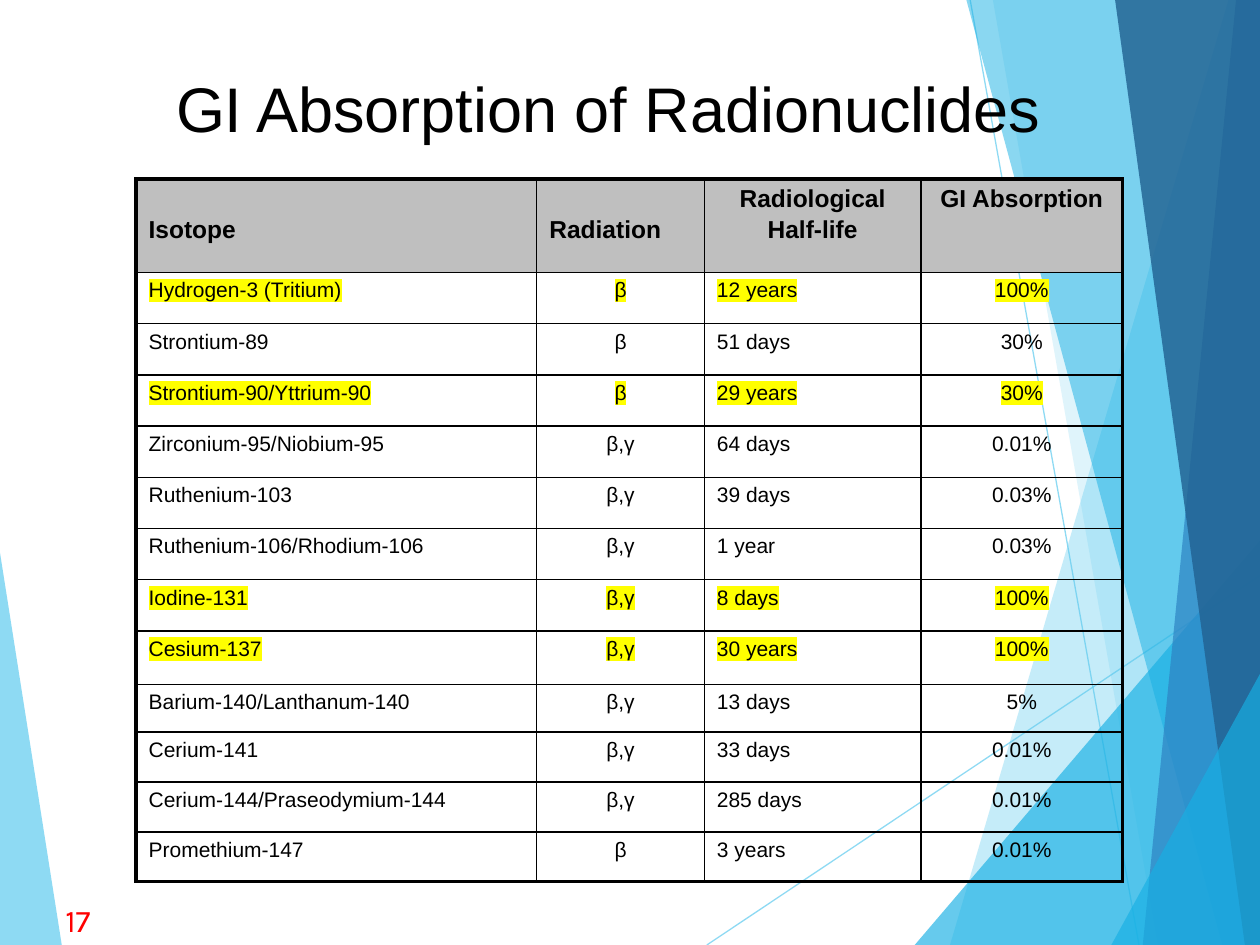
from dataclasses import dataclass

from lxml.etree import SubElement
from pptx import Presentation
from pptx.dml.color import RGBColor
from pptx.enum.shapes import MSO_CONNECTOR
from pptx.enum.text import PP_ALIGN
from pptx.oxml.ns import qn
from pptx.slide import Slide
from pptx.table import _Cell
from pptx.text.text import _Paragraph
from pptx.util import Inches, Pt

WIDTH, HEIGHT = Inches(10), Inches(7.5)
LEFT, CENTER = PP_ALIGN.LEFT, PP_ALIGN.CENTER


@dataclass(frozen=True)
class Theme:
    black: str = "000000"
    red: str = "FF0000"
    header_gray: str = "BFBFBF"
    marker: str = "FFFF00"
    sky: str = "5FCBEF"
    cyan: str = "17B0E4"
    blue: str = "2E83C3"
    navy: str = "226292"
    body_font: str = "Arial"
    number_font: str = "Karla"
    title_size: float = 36
    number_size: float = 18
    header_size: float = 14
    body_size: float = 12
    thin: float = 1
    thick: float = 2.25
    hairline: float = 0.75


THEME = Theme()


@dataclass(frozen=True)
class Facet:
    """A decorative polygon; points are percentages of the slide."""
    color: str
    opacity: int
    points: tuple[tuple[float, float], ...]


@dataclass(frozen=True)
class Isotope:
    name: str
    radiation: str
    half_life: str
    absorption: str
    marked: bool = False


@dataclass(frozen=True)
class Heading:
    lines: tuple[str, ...]
    width: float
    header_align: PP_ALIGN
    body_align: PP_ALIGN
    on_second_line: bool = False


LEFT_FACET = Facet(THEME.sky, 70, ((0, 58.5), (4.9, 100), (0, 100)))
RAYS = (((56.1, 100), (100, 60.9)), ((77, 0), (90.4, 100)))
RIGHT_FACETS = (
    Facet(THEME.sky, 36, ((97.5, 0), (75.4, 100), (100, 100), (100, 0))),
    Facet(THEME.sky, 20, ((78.8, 0), (91.9, 100), (100, 100), (100, 0))),
    Facet(THEME.cyan, 66, ((72.6, 100), (100, 57.2), (100, 100))),
    Facet(THEME.cyan, 50, ((76.7, 0), (97, 100), (100, 100), (100, 0))),
    Facet(THEME.blue, 70, ((98.1, 0), (90.7, 100), (100, 100), (100, 0))),
    Facet(THEME.navy, 82, ((88.5, 0), (98.8, 100), (100, 100), (100, 0))),
    Facet(THEME.cyan, 66, ((88.2, 100), (100, 71.3), (100, 100))),
)
HEADINGS = (
    Heading(("Isotope",), 3.18, LEFT, LEFT, on_second_line=True),
    Heading(("Radiation",), 1.33, LEFT, CENTER, on_second_line=True),
    Heading(("Radiological", "Half-life"), 1.72, CENTER, LEFT),
    Heading(("GI Absorption",), 1.6, CENTER, CENTER),
)
ISOTOPES = (
    Isotope("Hydrogen-3 (Tritium)", "β", "12 years", "100%", marked=True),
    Isotope("Strontium-89", "β", "51 days", "30%"),
    Isotope("Strontium-90/Yttrium-90", "β", "29 years", "30%", marked=True),
    Isotope("Zirconium-95/Niobium-95", "β,γ", "64 days", "0.01%"),
    Isotope("Ruthenium-103", "β,γ", "39 days", "0.03%"),
    Isotope("Ruthenium-106/Rhodium-106", "β,γ", "1 year", "0.03%"),
    Isotope("Iodine-131", "β,γ", "8 days", "100%", marked=True),
    Isotope("Cesium-137", "β,γ", "30 years", "100%", marked=True),
    Isotope("Barium-140/Lanthanum-140", "β,γ", "13 days", "5%"),
    Isotope("Cerium-141", "β,γ", "33 days", "0.01%"),
    Isotope("Cerium-144/Praseodymium-144", "β,γ", "285 days", "0.01%"),
    Isotope("Promethium-147", "β", "3 years", "0.01%"),
)
ROW_WEIGHTS = (0.75, *[0.41] * 7, 0.43, 0.38, *[0.4] * 3)


def across(percent: float) -> int:
    return round(WIDTH * percent / 100)


def down(percent: float) -> int:
    return round(HEIGHT * percent / 100)


def frame(left: float, top: float, width: float, height: float) -> tuple[int, ...]:
    return across(left), down(top), across(width), down(height)


def set_opacity(properties, percent: int) -> None:
    color = next(properties.iter(qn("a:srgbClr")))
    SubElement(color, qn("a:alpha"), val=str(percent * 1000))


def draw_facet(page: Slide, facet: Facet) -> None:
    start, *rest = [(across(x), down(y)) for x, y in facet.points]
    builder = page.shapes.build_freeform(*start)
    builder.add_line_segments(rest, close=True)
    shape = builder.convert_to_shape()
    shape.shadow.inherit = False
    shape.fill.solid()
    shape.fill.fore_color.rgb = RGBColor.from_string(facet.color)
    shape.line.fill.background()
    set_opacity(shape.element.spPr, facet.opacity)


def draw_ray(page: Slide, start: tuple[float, float], end: tuple[float, float]) -> None:
    ray = page.shapes.add_connector(MSO_CONNECTOR.STRAIGHT, across(start[0]),
                                    down(start[1]), across(end[0]), down(end[1]))
    ray.line.color.rgb = RGBColor.from_string(THEME.sky)
    ray.line.width = Pt(THEME.hairline)
    set_opacity(ray.element.spPr, 70)
    SubElement(ray.element.spPr, qn("a:effectLst"))


def add_span(para: _Paragraph, text: str, size: float, color: str = THEME.black,
             font: str = THEME.body_font, bold: bool = False, marked: bool = False) -> None:
    span = para.add_run()
    span.text = text
    span.font.size, span.font.name, span.font.bold = Pt(size), font, bold
    span.font.color.rgb = RGBColor.from_string(color)
    if marked:
        properties = span.font._element
        highlight = SubElement(properties, qn("a:highlight"))
        SubElement(highlight, qn("a:srgbClr"), val=THEME.marker)
        properties.find(qn("a:solidFill")).addnext(highlight)


def add_label(page: Slide, place: tuple[int, ...], text: str, align: PP_ALIGN,
              size: float, color: str, font: str) -> None:
    box = page.shapes.add_textbox(*place)
    box.text_frame.word_wrap = True
    para = box.text_frame.paragraphs[0]
    para.alignment = align
    add_span(para, text, size, color, font)


def set_borders(cell: _Cell, outer_sides: dict[str, bool]) -> None:
    """Rule all four sides, thicker where the side is on the table's rim."""
    properties = cell._tc.get_or_add_tcPr()
    for side, outer in outer_sides.items():
        width = Pt(THEME.thick if outer else THEME.thin)
        line = SubElement(properties, qn(f"a:ln{side}"), w=str(width))
        fill = SubElement(line, qn("a:solidFill"))
        SubElement(fill, qn("a:srgbClr"), val=THEME.black)


def fill_header(cell: _Cell, heading: Heading) -> None:
    cell.fill.solid()
    cell.fill.fore_color.rgb = RGBColor.from_string(THEME.header_gray)
    if heading.on_second_line:
        cell.margin_top = Inches(0.3)
    for index, line in enumerate(heading.lines):
        para = cell.text_frame.add_paragraph() if index else cell.text_frame.paragraphs[0]
        para.alignment = heading.header_align
        para.space_before = Pt(2.2 if index else 0)
        add_span(para, line, THEME.header_size, bold=True)


def fill_body(cell: _Cell, text: str, align: PP_ALIGN, marked: bool) -> None:
    cell.fill.background()
    para = cell.text_frame.paragraphs[0]
    para.alignment = align
    add_span(para, text, THEME.body_size, marked=marked)


def add_isotope_table(page: Slide) -> None:
    place = frame(10.8, 18.93, 78.3, 74.4)
    last_row, last_column = len(ISOTOPES), len(HEADINGS) - 1
    table = page.shapes.add_table(last_row + 1, last_column + 1, *place).table
    table.first_row = table.horz_banding = False
    for row, weight in zip(table.rows, ROW_WEIGHTS):
        row.height = round(place[3] * weight / sum(ROW_WEIGHTS))
    for c, heading in enumerate(HEADINGS):
        table.columns[c].width = Inches(heading.width)
        for r in range(last_row + 1):
            cell = table.cell(r, c)
            set_borders(cell, {"L": c == 0, "R": c == last_column,
                               "T": r == 0, "B": r == last_row})
            if r == 0:
                fill_header(cell, heading)
                continue
            isotope = ISOTOPES[r - 1]
            values = (isotope.name, isotope.radiation, isotope.half_life, isotope.absorption)
            fill_body(cell, values[c], heading.body_align, isotope.marked)


def main() -> None:
    deck = Presentation()
    deck.slide_width, deck.slide_height = WIDTH, HEIGHT
    page = deck.slides.add_slide(deck.slide_layouts[6])
    draw_facet(page, LEFT_FACET)
    for start, end in RAYS:
        draw_ray(page, start, end)
    for facet in RIGHT_FACETS:
        draw_facet(page, facet)
    add_label(page, frame(8.3, 6.67, 80, 9.33), "GI Absorption of Radionuclides",
              CENTER, THEME.title_size, THEME.black, THEME.body_font)
    add_isotope_table(page)
    add_label(page, frame(4.2, 94.67, 5.8, 5.33), "17",
              LEFT, THEME.number_size, THEME.red, THEME.number_font)
    deck.save("out.pptx")


if __name__ == "__main__":
    main()
